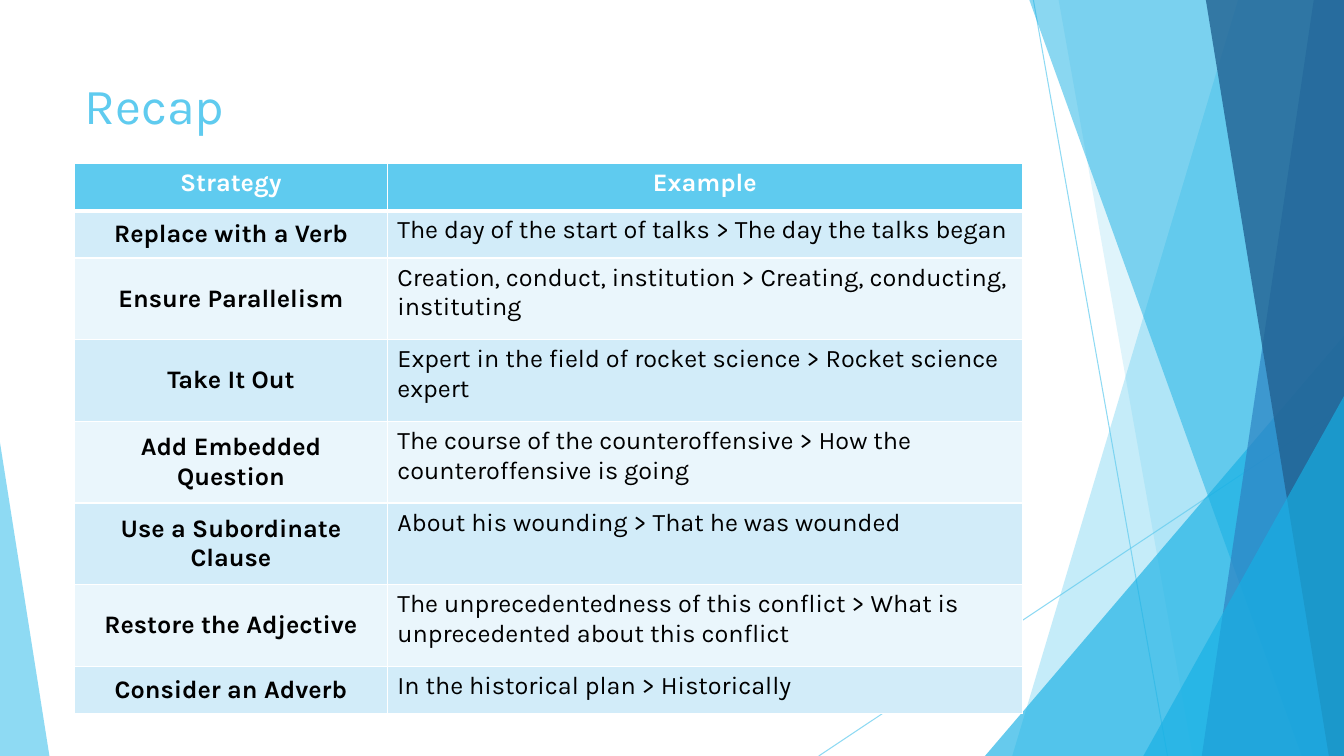
"""Build the recap slide: a table of strategies and examples beside overlapping panes."""
from dataclasses import dataclass

from pptx import Presentation
from pptx.dml.color import RGBColor
from pptx.enum.shapes import MSO_CONNECTOR, MSO_SHAPE
from pptx.enum.text import MSO_ANCHOR, PP_ALIGN
from pptx.oxml.ns import qn
from pptx.util import Inches, Pt
from lxml.etree import SubElement


@dataclass(frozen=True)
class Theme:
    font: str = "Karla"
    sky: str = "5FCBEF"
    cyan: str = "17B0E4"
    blue: str = "2E83C3"
    navy: str = "226292"
    band: str = "D2ECF9"
    pale: str = "EAF6FC"
    white: str = "FFFFFF"
    black: str = "000000"
    title_size: int = 36
    body_size: int = 18
    hairline: float = 0.75
    border: int = 1
    header_border: int = 3


T = Theme()
TITLE = "Recap"
HEADER = ("Strategy", "Example")
STRATEGIES = [
    ("Replace with a Verb", "The day of the start of talks > The day the talks began", 1),
    ("Ensure Parallelism", "Creation, conduct, institution > Creating, conducting, instituting", 2),
    ("Take It Out", "Expert in the field of rocket science > Rocket science expert", 2),
    ("Add Embedded Question",
     "The course of the counteroffensive > How the counteroffensive is going", 2),
    ("Use a Subordinate Clause", "About his wounding > That he was wounded", 2),
    ("Restore the Adjective",
     "The unprecedentedness of this conflict > What is unprecedented about this conflict", 2),
    ("Consider an Adverb", "In the historical plan > Historically", 1),
]

# Percentages of the slide's width and height
LEFT, WIDTH = 5.55, 70.52
TITLE_TOP, TITLE_HEIGHT = 8.93, 9.73
TABLE_TOP = 21.6
ROW_HEIGHT = {1: 6.27, 2: 10.8}
STRATEGY_SHARE = 0.33
LINES = [(76.89, 0, 86.87, 100), (100, 53.73, 60.92, 100)]
LINE_OPACITY = 70
PANES = [
    ("pane", 92.12, 75.32, T.sky, 36),
    ("pane", 78.77, 88.75, T.sky, 20),
    ("corner", 73.29, 44.4, T.cyan, 66),
    ("pane", 76.59, 96.85, T.cyan, 50),
    ("pane", 97.75, 89.42, T.blue, 70),
    ("pane", 89.72, 98.87, T.navy, 80),
    ("corner", 85.07, 52.4, T.cyan, 66),
]
LEFT_CORNER = (3.68, 58.53, T.sky, 70)

prs = Presentation()
prs.slide_width, prs.slide_height = Inches(13.33), Inches(7.5)
slide = prs.slides.add_slide(prs.slide_layouts[6])


def x(share):
    return round(prs.slide_width * share / 100)


def y(share):
    return round(prs.slide_height * share / 100)


def rgb(code):
    return RGBColor.from_string(code)


def set_opacity(s, percent):
    for color in s._element.spPr.iter(qn("a:srgbClr")):
        SubElement(color, qn("a:alpha"), val=str(percent * 1000))


def paint(s, color, opacity):
    s.shadow.inherit = False
    s.fill.solid()
    s.fill.fore_color.rgb = rgb(color)
    s.line.fill.background()
    set_opacity(s, opacity)


def add_line(x1, y1, x2, y2):
    s = slide.shapes.add_connector(MSO_CONNECTOR.STRAIGHT, x(x1), y(y1), x(x2), y(y2))
    s.line.color.rgb = rgb(T.sky)
    s.line.width = Pt(T.hairline)
    set_opacity(s, LINE_OPACITY)
    SubElement(s._element.spPr, qn("a:effectLst"))


def add_pane(top_x, bottom_x, color, opacity):
    builder = slide.shapes.build_freeform(x(top_x), 0)
    builder.add_line_segments([(x(100), 0), (x(100), y(100)), (x(bottom_x), y(100))])
    paint(builder.convert_to_shape(), color, opacity)


def add_corner(left, right, top, peak, color, opacity):
    s = slide.shapes.add_shape(MSO_SHAPE.ISOSCELES_TRIANGLE, x(left), y(top),
                               x(right - left), y(100 - top))
    s.adjustments[0] = peak
    paint(s, color, opacity)


def write(tf, text, size, color, bold=False, align=PP_ALIGN.LEFT):
    tf.word_wrap = True
    p = tf.paragraphs[0]
    p.alignment = align
    r = p.add_run()
    r.text = text
    r.font.name, r.font.size, r.font.bold = T.font, Pt(size), bold
    r.font.color.rgb = rgb(color)


def set_borders(cell, top, bottom):
    tc_pr = cell._tc.get_or_add_tcPr()
    widths = {"lnL": T.border, "lnR": T.border, "lnT": top, "lnB": bottom}
    for place, (tag, width) in enumerate(widths.items()):
        line = SubElement(tc_pr, qn(f"a:{tag}"), w=str(Pt(width)))
        SubElement(SubElement(line, qn("a:solidFill")), qn("a:srgbClr"), val=T.white)
        tc_pr.insert(place, line)


def add_strategy_table():
    rows = [(*HEADER, 1), *STRATEGIES]
    heights = [y(ROW_HEIGHT[lines]) for *_, lines in rows]
    table = slide.shapes.add_table(len(rows), len(HEADER), x(LEFT), y(TABLE_TOP),
                                   x(WIDTH), sum(heights)).table
    table.horz_banding = False
    table.columns[0].width = round(x(WIDTH) * STRATEGY_SHARE)
    table.columns[1].width = x(WIDTH) - table.columns[0].width
    for i, (*texts, _) in enumerate(rows):
        table.rows[i].height = heights[i]
        header = i == 0
        fill = T.sky if header else (T.pale, T.band)[i % 2]
        for j, text in enumerate(texts):
            cell = table.cell(i, j)
            cell.fill.solid()
            cell.fill.fore_color.rgb = rgb(fill)
            label = header or j == 0
            cell.vertical_anchor = MSO_ANCHOR.MIDDLE if label and not header else MSO_ANCHOR.TOP
            write(cell.text_frame, text, T.body_size, T.white if header else T.black,
                  label, PP_ALIGN.CENTER if label else PP_ALIGN.LEFT)
            set_borders(cell, T.header_border if i == 1 else T.border,
                        T.header_border if header else T.border)


def main():
    for line in LINES:
        add_line(*line)
    for kind, first, second, color, opacity in PANES:
        if kind == "pane":
            add_pane(first, second, color, opacity)
        else:
            add_corner(first, 100, second, 1, color, opacity)
    right, top, color, opacity = LEFT_CORNER
    add_corner(0, right, top, 0, color, opacity)

    title = slide.shapes.add_textbox(x(LEFT), y(TITLE_TOP), x(WIDTH), y(TITLE_HEIGHT))
    title.text_frame.vertical_anchor = MSO_ANCHOR.MIDDLE
    write(title.text_frame, TITLE, T.title_size, T.sky)
    add_strategy_table()
    prs.save("out.pptx")


if __name__ == "__main__":
    main()
